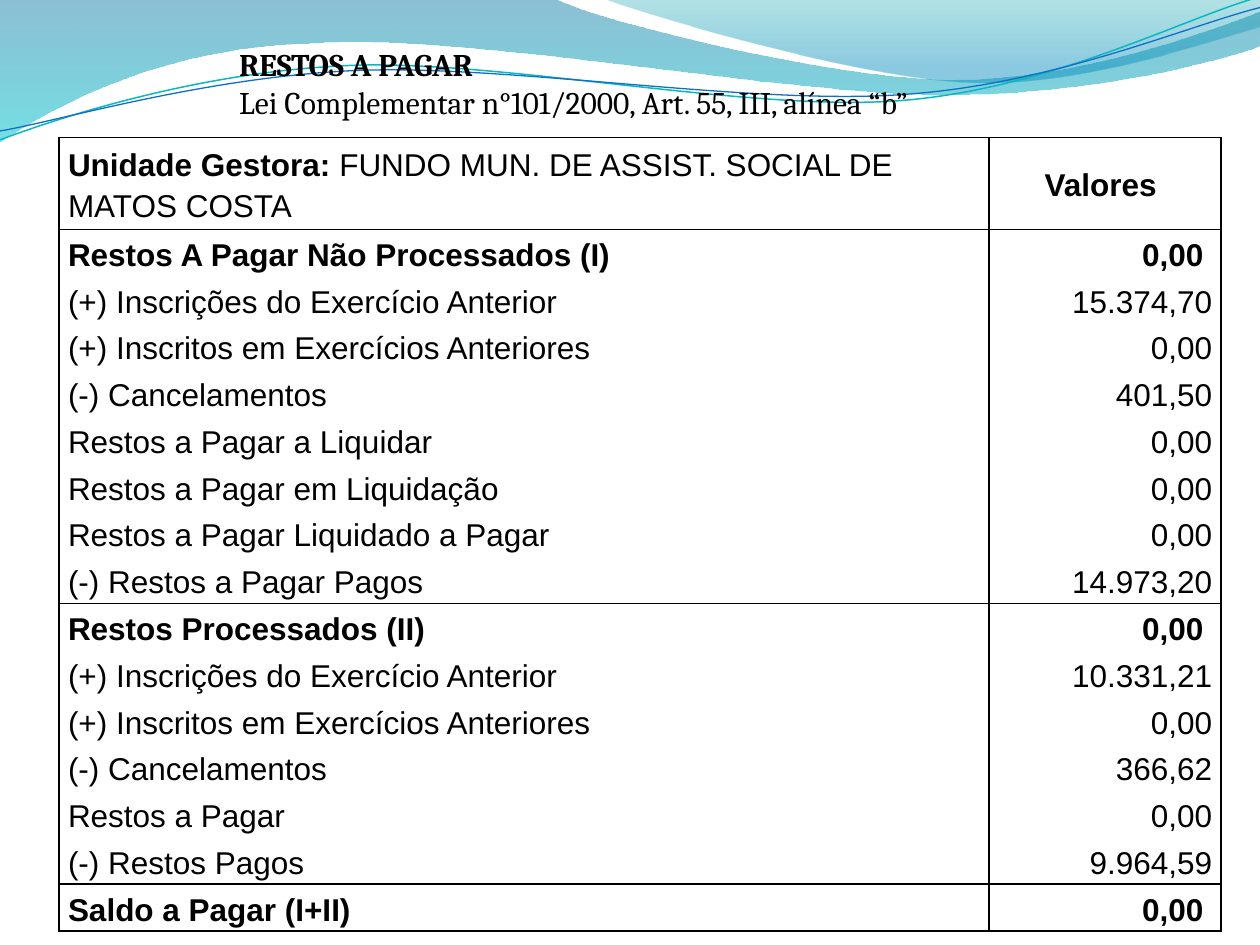
from math import cos, radians, sin

from lxml import etree
from pptx import Presentation
from pptx.dml.color import RGBColor
from pptx.enum.text import MSO_ANCHOR, MSO_AUTO_SIZE, PP_ALIGN
from pptx.oxml.ns import qn
from pptx.util import Inches, Pt

MIDDLE = MSO_ANCHOR.MIDDLE
LEFT, CENTER, RIGHT = PP_ALIGN.LEFT, PP_ALIGN.CENTER, PP_ALIGN.RIGHT

COLORS = {
    "text": "000000", "border": "000000",
    "deep": "0074A1", "aqua": "00C6CF", "teal": "00A1A9", "sky": "008BBF",
    "teal_line": "0AB8BF", "blue_line": "0F6FC6",
}

HEADING = [
    ("RESTOS A PAGAR", True),
    ("Lei Complementar n°101/2000, Art. 55, III, alínea “b”", False),
]
HEADER = ("Unidade Gestora:", " FUNDO MUN. DE ASSIST. SOCIAL DE MATOS COSTA", "Valores ")
# The first row of each section is its bold total
SECTIONS = [
    [
        ("Restos A Pagar Não Processados (I)", "0,00 "),
        ("(+) Inscrições do Exercício Anterior", "15.374,70"),
        ("(+) Inscritos em Exercícios Anteriores", "0,00"),
        ("(-) Cancelamentos", "401,50"),
        ("Restos a Pagar a Liquidar", "0,00"),
        ("Restos a Pagar em Liquidação", "0,00"),
        ("Restos a Pagar Liquidado a Pagar", "0,00"),
        ("(-) Restos a Pagar Pagos", "14.973,20"),
    ],
    [
        ("Restos Processados (II)", "0,00 "),
        ("(+) Inscrições do Exercício Anterior", "10.331,21"),
        ("(+) Inscritos em Exercícios Anteriores", "0,00"),
        ("(-) Cancelamentos", "366,62"),
        ("Restos a Pagar", "0,00"),
        ("(-) Restos Pagos", "9.964,59"),
    ],
    [("Saldo a Pagar (I+II)", "0,00 ")],
]

# Outlines in inches: a pair is a line end, six numbers are a Bézier curve
BANDS = [
    ([(0, 0), (4.4, -0.01), (4.76, 0.17, 6.64, 0.63, 7.58, 0.63),
      (8.53, 0.63, 9.58, 0.26, 10, 0.09), (10.01, 0.36),
      (9.83, 0.44, 8.7, 0.76, 7.46, 0.75), (6.22, 0.75, 3.82, 0.28, 2.57, 0.34),
      (1.29, 0.36, 0.46, 0.83, -0.01, 1.13)],
     [(0, "deep", 45), (1, "aqua", 55)]),
    ([(4.79, -0.01), (5.09, 0.11, 6.82, 0.62, 7.69, 0.65),
      (8.56, 0.69, 9.61, 0.32, 10, 0.21), (10, 0)],
     [(0, "teal", 30), (0.8, "sky", 45)]),
]
WAVES = [
    ([(0, 1.11), (0.48, 0.93, 1.58, 0.57, 2.77, 0.52),
      (3.95, 0.47, 5.93, 0.89, 7.13, 0.8), (8.33, 0.71, 9.38, 0.15, 9.98, -0.02)],
     "teal_line", 0.85, (4.99, 0.58)),
    ([(0, 1.04), (0.47, 0.96, 1.64, 0.61, 2.83, 0.56),
      (4.03, 0.51, 5.97, 0.84, 7.17, 0.75), (8.36, 0.67, 9.41, 0.21, 10, 0.06)],
     "blue_line", 0.75, (5, 0.59)),
]
TILT = -2.7
COLUMNS = (7.38, 1.84)
HEADER_HEIGHT, TABLE_HEIGHT = 0.73, 6.3
INSETS = {"margin_left": 0.07, "margin_top": 0.01, "margin_right": 0.07, "margin_bottom": 0.01}


def rgb(name):
    return RGBColor.from_string(COLORS[name])


def pairs(step):
    return list(zip(step[::2], step[1::2]))


def turn(outline, center, degrees):
    """Rotate every point of an outline about a center."""
    cx, cy = center
    c, s = cos(radians(degrees)), sin(radians(degrees))
    return [sum(((cx + (x - cx) * c - (y - cy) * s, cy + (x - cx) * s + (y - cy) * c)
                 for x, y in pairs(step)), ()) for step in outline]


def add_outline(slide, outline, close):
    """Build a freeform through the end points, then bend its curved segments."""
    ends = [tuple(map(Inches, step[-2:])) for step in outline]
    builder = slide.shapes.build_freeform(*ends[0], scale=1.0)
    builder.add_line_segments(ends[1:], close=close)
    sp = builder.convert_to_shape()
    sp.shadow.inherit = False
    segments = list(sp._element.iter(qn("a:lnTo")))
    for segment, step in zip(segments, outline[1:]):
        if len(step) == 6:
            curve = etree.Element(qn("a:cubicBezTo"))
            for x, y in pairs(step):
                etree.SubElement(curve, qn("a:pt"), x=str(Inches(x) - sp.left),
                                 y=str(Inches(y) - sp.top))
            segment.getparent().replace(segment, curve)
    return sp


def add_band(slide, outline, stops):
    sp = add_outline(slide, outline, True)
    sp.line.fill.background()
    sp.fill.gradient()
    sp.fill.gradient_angle = 270
    for stop, (position, color, _) in zip(sp.fill.gradient_stops, stops):
        stop.position = position
        stop.color.rgb = rgb(color)
    for clr, (_, _, opacity) in zip(sp._element.spPr.iter(qn("a:srgbClr")), stops):
        etree.SubElement(clr, qn("a:alpha"), val=str(opacity * 1000))


def add_wave(slide, outline, color, width, center):
    sp = add_outline(slide, turn(outline, center, -TILT), False)
    sp.rotation = TILT
    sp.fill.background()
    sp.line.color.rgb = rgb(color)
    sp.line.width = Pt(width)


def add_run(p, text, font, bold):
    r = p.add_run()
    r.text = text
    for key, value in {"name": font, "size": Pt(18), "bold": bold}.items():
        setattr(r.font, key, value)
    r.font.color.rgb = rgb("text")


def set_borders(cell, sides):
    """Draw the named sides (of L, R, T, B) and clear the others."""
    tcPr = cell._tc.get_or_add_tcPr()
    for side in "LRTB":
        ln = etree.SubElement(tcPr, qn(f"a:ln{side}"), w=str(Pt(1)))
        if side in sides:
            fill = etree.SubElement(ln, qn("a:solidFill"))
            etree.SubElement(fill, qn("a:srgbClr"), val=COLORS["border"])
        else:
            etree.SubElement(ln, qn("a:noFill"))


def fill_cell(cell, runs, align, sides):
    for key, value in INSETS.items():
        setattr(cell, key, Inches(value))
    cell.vertical_anchor = MIDDLE
    p = cell.text_frame.paragraphs[0]
    p.alignment, p.line_spacing = align, 1.15
    for text, bold in runs:
        add_run(p, text, "Arial", bold)
    set_borders(cell, sides)
    cell.fill.background()


def add_heading(slide):
    tf = slide.shapes.add_textbox(*map(Inches, (1.8, 0.31, 6.72, 0.71))).text_frame
    tf.word_wrap = True
    tf.auto_size = MSO_AUTO_SIZE.SHAPE_TO_FIT_TEXT
    for i, (text, bold) in enumerate(HEADING):
        p = tf.add_paragraph() if i else tf.paragraphs[0]
        add_run(p, text, "Cambria", bold)


def add_balance_table(slide):
    count = sum(map(len, SECTIONS))
    table = slide.shapes.add_table(
        count + 1, 2, *map(Inches, (0.47, 1.09, sum(COLUMNS), TABLE_HEIGHT))).table
    table.first_row = table.horz_banding = False
    for column, width in zip(table.columns, COLUMNS):
        column.width = Inches(width)
    for i, row in enumerate(table.rows):
        row.height = Inches((TABLE_HEIGHT - HEADER_HEIGHT) / count if i else HEADER_HEIGHT)

    label, name, values = HEADER
    fill_cell(table.cell(0, 0), [(label, True), (name, False)], LEFT, "LRTB")
    fill_cell(table.cell(0, 1), [(values, True)], CENTER, "LRTB")
    n = 1
    for section in SECTIONS:
        for i, entry in enumerate(section):
            sides = "LR" + "T" * (i == 0) + "B" * (i == len(section) - 1)
            for col, (text, align) in enumerate(zip(entry, (LEFT, RIGHT))):
                fill_cell(table.cell(n, col), [(text, i == 0)], align, sides)
            n += 1


def main():
    prs = Presentation()
    prs.slide_width, prs.slide_height = Inches(10), Inches(7.5)
    slide = prs.slides.add_slide(prs.slide_layouts[6])
    for band in BANDS:
        add_band(slide, *band)
    for wave in WAVES:
        add_wave(slide, *wave)
    add_heading(slide)
    add_balance_table(slide)
    prs.save("out.pptx")


if __name__ == "__main__":
    main()
